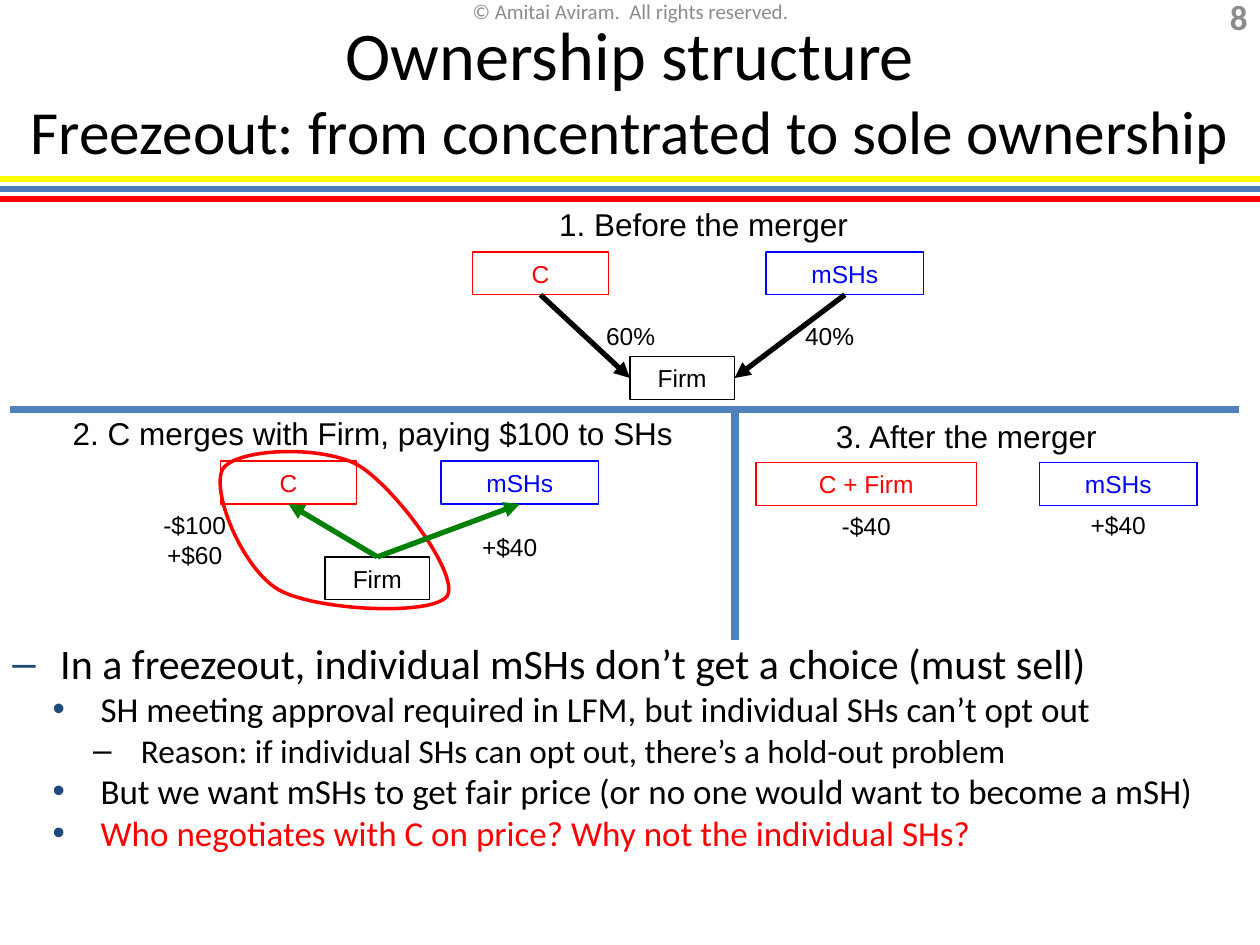
"""Build the slide on ownership before, during and after a freezeout merger."""
from dataclasses import dataclass

from lxml.etree import SubElement
from pptx import Presentation
from pptx.dml.color import RGBColor
from pptx.enum.shapes import MSO_CONNECTOR, MSO_SHAPE
from pptx.enum.text import MSO_ANCHOR, MSO_AUTO_SIZE, PP_ALIGN
from pptx.oxml.ns import qn
from pptx.util import Inches, Pt

BLACK = RGBColor(0x00, 0x00, 0x00)
WHITE = RGBColor(0xFF, 0xFF, 0xFF)
RED = RGBColor(0xFF, 0x00, 0x00)
BLUE = RGBColor(0x00, 0x00, 0xFF)
GREEN = RGBColor(0x00, 0x80, 0x00)
YELLOW = RGBColor(0xFF, 0xFF, 0x00)
GRAY = RGBColor(0x8C, 0x8C, 0x8C)
NAVY = RGBColor(0x1F, 0x49, 0x7D)
RULE_BLUE = RGBColor(0x4B, 0x7E, 0xBC)
DIVIDER_BLUE = RGBColor(0x4F, 0x81, 0xBD)
TOP, LEFT, BOTTOM, RIGHT = range(4)


@dataclass
class Party:
    name: str
    left: float
    top: float
    width: float
    color: RGBColor


@dataclass
class Label:
    text: str
    left: float
    top: float
    width: float
    height: float = 0.33
    size: int = 14


@dataclass
class Arrow:
    source: str
    source_side: int
    target: str
    target_side: int
    color: RGBColor


@dataclass
class Bullet:
    text: str
    level: int
    size: int
    color: RGBColor = BLACK


@dataclass
class HeaderNote:
    text: str
    left: float
    top: float
    width: float
    height: float
    size: int
    align: PP_ALIGN
    bold: bool = False


RULES = [(1.42, YELLOW), (1.5, RULE_BLUE), (1.58, RED)]
HEADER_NOTES = [
    HeaderNote("© Amitai Aviram.  All rights reserved.", 3.42, 0, 3.17, 0.17, 12, PP_ALIGN.CENTER),
    HeaderNote("8", 9.33, 0.01, 0.67, 0.24, 20, PP_ALIGN.RIGHT, True),
]
PARTIES = {
    "firm before": Party("Firm", 5, 2.83, 0.83, BLACK),
    "C before": Party("C", 3.75, 2, 1.08, RED),
    "mSHs before": Party("mSHs", 6.08, 2, 1.25, BLUE),
    "firm merging": Party("Firm", 2.58, 4.42, 0.83, BLACK),
    "C merging": Party("C", 1.75, 3.66, 1.08, RED),
    "mSHs merging": Party("mSHs", 3.5, 3.66, 1.25, BLUE),
    "C after": Party("C + Firm", 6, 3.67, 1.75, RED),
    "mSHs after": Party("mSHs", 8.25, 3.67, 1.25, BLUE),
}
ARROWS = [
    Arrow("C before", BOTTOM, "firm before", LEFT, BLACK),
    Arrow("mSHs before", BOTTOM, "firm before", RIGHT, BLACK),
    Arrow("firm merging", TOP, "C merging", BOTTOM, GREEN),
    Arrow("firm merging", TOP, "mSHs merging", BOTTOM, GREEN),
]
LABELS = [
    Label("1. Before the merger", 3.92, 1.58, 3.33, 0.4, 18),
    Label("2. C merges with Firm, paying $100 to SHs", 0, 3.24, 5.92, 0.4, 18),
    Label("3. After the merger", 6.17, 3.26, 3, 0.4, 18),
    Label("60%", 4.67, 2.5, 0.67),
    Label("40%", 6.17, 2.5, 0.83),
    Label("-$40", 6.5, 4.01, 0.75),
    Label("+$40", 8.5, 4, 0.75),
    Label("+$40", 3.67, 4.17, 0.75),
    Label("-$100\n+$60", 1.17, 4, 0.75, 0.57),
]
BULLETS = [
    Bullet("In a freezeout, individual mSHs don’t get a choice (must sell)", 0, 24),
    Bullet("SH meeting approval required in LFM, but individual SHs can’t opt out", 1, 20),
    Bullet("Reason: if individual SHs can opt out, there’s a hold-out problem", 2, 19),
    Bullet("But we want mSHs to get fair price (or no one would want to become a mSH)", 1, 20),
    Bullet("Who negotiates with C on price? Why not the individual SHs?", 1, 20, RED),
]
LOOP = [
    [(1.77, 3.72), (1.67, 3.89), (1.92, 4.51), (2.21, 4.68)],
    [(2.21, 4.68), (2.51, 4.85), (3.44, 4.89), (3.55, 4.73)],
    [(3.55, 4.73), (3.65, 4.56), (3.13, 3.86), (2.84, 3.69)],
    [(2.84, 3.69), (2.54, 3.53), (1.88, 3.56), (1.77, 3.72)],
]


def format_text(paragraph, font_name: str, size: int, color: RGBColor, align=PP_ALIGN.CENTER) -> None:
    paragraph.alignment = align
    paragraph.font.name = font_name
    paragraph.font.size = Pt(size)
    paragraph.font.color.rgb = color


def add_text_frame(slide, left: float, top: float, width: float, height: float):
    text_frame = slide.shapes.add_textbox(*map(Inches, (left, top, width, height))).text_frame
    text_frame.word_wrap = True
    return text_frame


def add_line(slide, start: tuple, end: tuple, color: RGBColor, width: float):
    line = slide.shapes.add_connector(MSO_CONNECTOR.STRAIGHT, *map(Inches, start + end))
    line.line.color.rgb = color
    line.line.width = Pt(width)
    SubElement(line._element.spPr, qn("a:effectLst"))
    return line


def add_arrow(slide, arrow: Arrow, boxes: dict) -> None:
    line = add_line(slide, (0, 0), (1, 1), arrow.color, 3)
    line.begin_connect(boxes[arrow.source], arrow.source_side)
    line.end_connect(boxes[arrow.target], arrow.target_side)
    SubElement(line.line._get_or_add_ln(), qn("a:tailEnd"), type="triangle")


def add_party(slide, party: Party):
    position = map(Inches, (party.left, party.top, party.width, 0.34))
    box = slide.shapes.add_shape(MSO_SHAPE.RECTANGLE, *position)
    box.shadow.inherit = False
    box.fill.background()
    box.line.color.rgb = party.color
    box.line.width = Pt(0.75)
    box.text_frame.text = party.name
    format_text(box.text_frame.paragraphs[0], "Arial", 14, party.color)
    return box


def add_label(slide, label: Label) -> None:
    paragraph = add_text_frame(slide, label.left, label.top, label.width, label.height).paragraphs[0]
    paragraph.text = label.text
    format_text(paragraph, "Arial", label.size, BLACK)


def add_header_note(slide, note: HeaderNote) -> None:
    text_frame = add_text_frame(slide, note.left, note.top, note.width, note.height)
    text_frame.margin_top = text_frame.margin_bottom = 0
    text_frame.vertical_anchor = MSO_ANCHOR.MIDDLE
    paragraph = text_frame.paragraphs[0]
    paragraph.text = note.text
    format_text(paragraph, "Calibri", note.size, GRAY, note.align)
    paragraph.font.bold = note.bold


def add_merger_loop(slide, steps: int = 24) -> None:
    points = [
        tuple(
            Inches((1 - t) ** 3 * a + 3 * (1 - t) ** 2 * t * b + 3 * (1 - t) * t**2 * c + t**3 * d)
            for a, b, c, d in zip(*curve)
        )
        for curve in LOOP
        for t in (step / steps for step in range(steps))
    ]
    builder = slide.shapes.build_freeform(*points[0])
    builder.add_line_segments(points[1:], close=True)
    loop = builder.convert_to_shape()
    loop.shadow.inherit = False
    loop.fill.solid()
    loop.fill.fore_color.rgb = WHITE
    loop.line.color.rgb = RED
    loop.line.width = Pt(2)


def add_bullets(slide) -> None:
    text_frame = add_text_frame(slide, 0, 5.01, 10, 2.49)
    for index, bullet in enumerate(BULLETS):
        paragraph = text_frame.add_paragraph() if index else text_frame.paragraphs[0]
        paragraph.text = bullet.text
        paragraph.level = bullet.level
        properties = paragraph._p.get_or_add_pPr()
        properties.set("marL", str(Inches(0.38 + 0.32 * bullet.level)))
        properties.set("indent", str(Inches(-0.38)))
        bullet_color = BLACK if bullet.level == 2 else NAVY
        SubElement(SubElement(properties, qn("a:buClr")), qn("a:srgbClr"), val=str(bullet_color))
        SubElement(properties, qn("a:buFont"), typeface="Arial")
        SubElement(properties, qn("a:buChar"), char="•" if bullet.level == 1 else "–")
        format_text(paragraph, "Calibri", bullet.size, bullet.color, PP_ALIGN.LEFT)


def set_title(slide) -> None:
    title = slide.shapes.title
    title.left, title.top, title.width, title.height = map(Inches, (0, 0, 10, 1.42))
    title.text_frame.auto_size = MSO_AUTO_SIZE.NONE
    title.text_frame.vertical_anchor = MSO_ANCHOR.MIDDLE
    paragraph = title.text_frame.paragraphs[0]
    format_text(paragraph, "Calibri", 39, BLACK)
    paragraph.text = "Ownership structure\nFreezeout: from concentrated to sole ownership"
    paragraph.runs[0].font.size, paragraph.runs[1].font.size = Pt(39), Pt(35)


def main() -> None:
    presentation = Presentation()
    presentation.slide_width, presentation.slide_height = Inches(10), Inches(7.5)
    slide = presentation.slides.add_slide(presentation.slide_layouts[5])
    set_title(slide)
    for top, color in RULES:
        add_line(slide, (0, top), (10, top), color, 3)
    for note in HEADER_NOTES:
        add_header_note(slide, note)
    add_merger_loop(slide)
    add_bullets(slide)
    boxes = {key: add_party(slide, party) for key, party in PARTIES.items()}
    add_line(slide, (5.83, 3.26), (5.83, 5.08), DIVIDER_BLUE, 4.5)
    add_line(slide, (9.83, 3.25), (0.08, 3.25), DIVIDER_BLUE, 4.5)
    for arrow in ARROWS:
        add_arrow(slide, arrow, boxes)
    for label in LABELS:
        add_label(slide, label)
    presentation.save("out.pptx")


if __name__ == "__main__":
    main()
